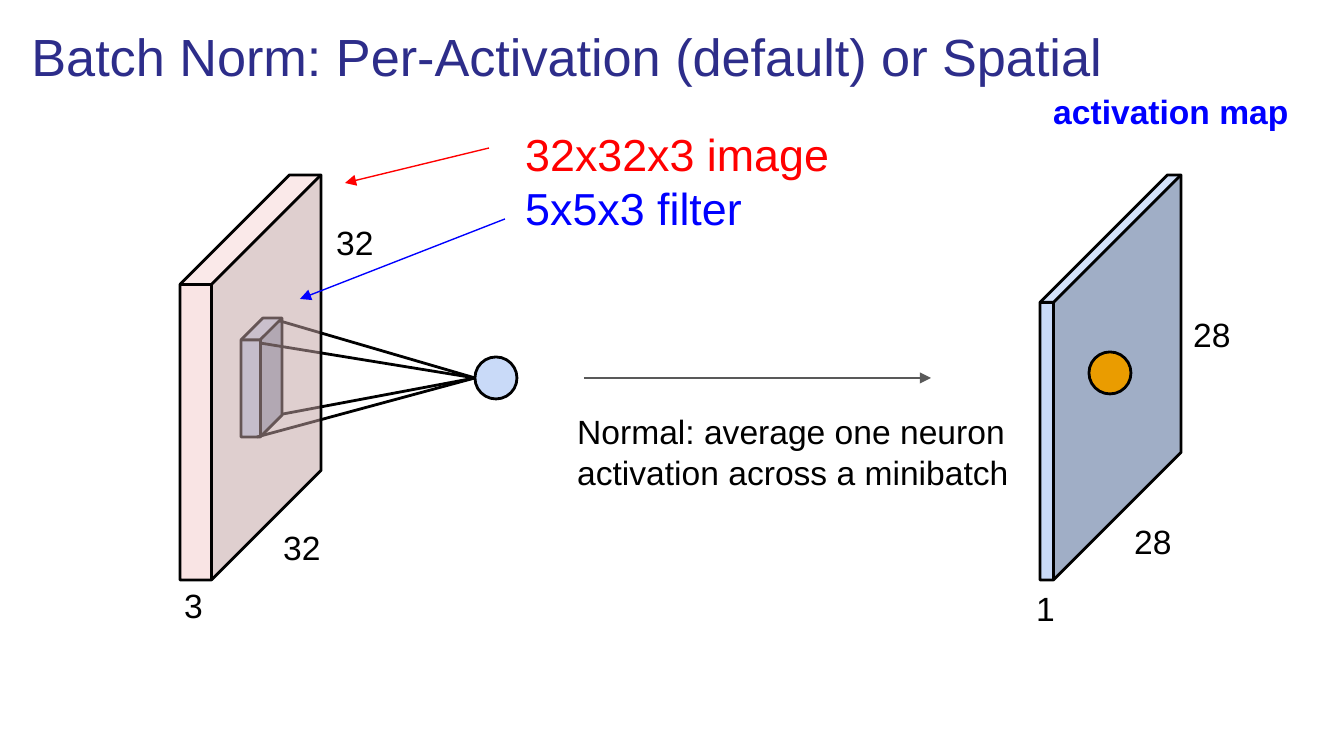
from lxml.etree import SubElement
from pptx import Presentation
from pptx.dml.color import RGBColor
from pptx.enum.shapes import MSO_CONNECTOR, MSO_SHAPE
from pptx.enum.text import MSO_ANCHOR, PP_ALIGN
from pptx.oxml.ns import qn
from pptx.util import Emu, Inches, Pt

EMU_PER_PX = 914400 / 134.4
BLACK, RED, BLUE, PALE_BLUE = "000000", "FF0000", "0000FF", "C9DAF8"


def px(n):
    return Emu(round(n * EMU_PER_PX))


def color(value):
    return RGBColor.from_string(value)


def set_text(s, lines, size=18, colors=(BLACK,), bold=False):
    tf = s.text_frame
    tf.word_wrap = True
    tf.vertical_anchor = MSO_ANCHOR.TOP
    tf.margin_left = tf.margin_right = tf.margin_top = tf.margin_bottom = Inches(0.1)
    for i, (line, c) in enumerate(zip(lines, colors)):
        p = tf.add_paragraph() if i else tf.paragraphs[0]
        p.alignment = PP_ALIGN.LEFT
        p.line_spacing = 1.0
        p.space_before = Pt(0)
        r = p.add_run()
        r.text = line
        r.font.name = "Arial"
        r.font.size = Pt(size)
        r.font.bold = bold
        r.font.color.rgb = color(c)


def add_text(slide, box, *lines, **fmt):
    set_text(slide.shapes.add_textbox(*map(px, box)), lines, **fmt)


def add_title(slide, box, text, **fmt):
    s = slide.shapes.title
    s.left, s.top, s.width, s.height = map(px, box)
    set_text(s, [text], **fmt)


def add_solid(slide, kind, box, fill, adj=None, alpha=None):
    s = slide.shapes.add_shape(kind, *map(px, box))
    s.shadow.inherit = False
    s.fill.solid()
    s.fill.fore_color.rgb = color(fill)
    s.line.color.rgb = color(BLACK)
    s.line.width = Pt(1.5)
    if adj is not None:
        s.adjustments[0] = adj
    if alpha is not None:
        clr = s._element.spPr.find(qn("a:solidFill")).find(qn("a:srgbClr"))
        SubElement(clr, qn("a:alpha")).set("val", str(alpha * 1000))


def add_line(slide, start, end, line=BLACK, width=1.5, arrow=False):
    s = slide.shapes.add_connector(MSO_CONNECTOR.STRAIGHT, *map(px, start + end))
    s.line.color.rgb = color(line)
    s.line.width = Pt(width)
    if arrow:
        tail = SubElement(s.line._get_or_add_ln(), qn("a:tailEnd"))
        tail.set("type", "triangle")
        tail.set("w", "med")
        tail.set("len", "med")
    SubElement(s._element.spPr, qn("a:effectLst"))


def main():
    prs = Presentation()
    prs.slide_width, prs.slide_height = px(1344), px(756)
    slide = prs.slides.add_slide(prs.slide_layouts[5])
    add_title(slide, (18, 11, 1245, 93),
              "Batch Norm: Per-Activation (default) or Spatial",
              size=28, colors=["2D2D8A"])

    add_solid(slide, MSO_SHAPE.CUBE, (241, 318, 41, 119), PALE_BLUE, adj=0.534)
    add_solid(slide, MSO_SHAPE.OVAL, (475, 357, 42, 42), PALE_BLUE)
    for corner in [(257, 437), (260, 343), (280, 321), (283, 414)]:
        add_line(slide, corner, (475, 378))
    add_solid(slide, MSO_SHAPE.CUBE, (180, 175, 141, 405), "F4CCCC", adj=0.777, alpha=52)
    add_solid(slide, MSO_SHAPE.CUBE, (1040, 175, 141, 405), PALE_BLUE, adj=0.904)
    add_solid(slide, MSO_SHAPE.OVAL, (1089, 352, 42, 42), "EA9C00")

    for start, end, c in [((489, 148), (345, 183), RED),
                          ((505, 219), (300, 299), BLUE),
                          ((584, 378), (931, 378), "595959")]:
        add_line(slide, start, end, line=c, width=0.75, arrow=True)

    for left, top, label in [(270, 513, "32"), (323, 208, "32"), (171, 571, "3"),
                             (1023, 574, "1"), (1121, 507, "28"), (1180, 300, "28")]:
        add_text(slide, (left, top, 73, 46), label)
    add_text(slide, (512, 113, 535, 81), "32x32x3 image", "5x5x3 filter",
             size=24, colors=[RED, BLUE])
    add_text(slide, (564, 398, 481, 120),
             "Normal: average one neuron activation across a minibatch")
    add_text(slide, (1040, 77, 266, 79), "activation map", colors=[BLUE], bold=True)

    prs.save("out.pptx")


if __name__ == "__main__":
    main()
